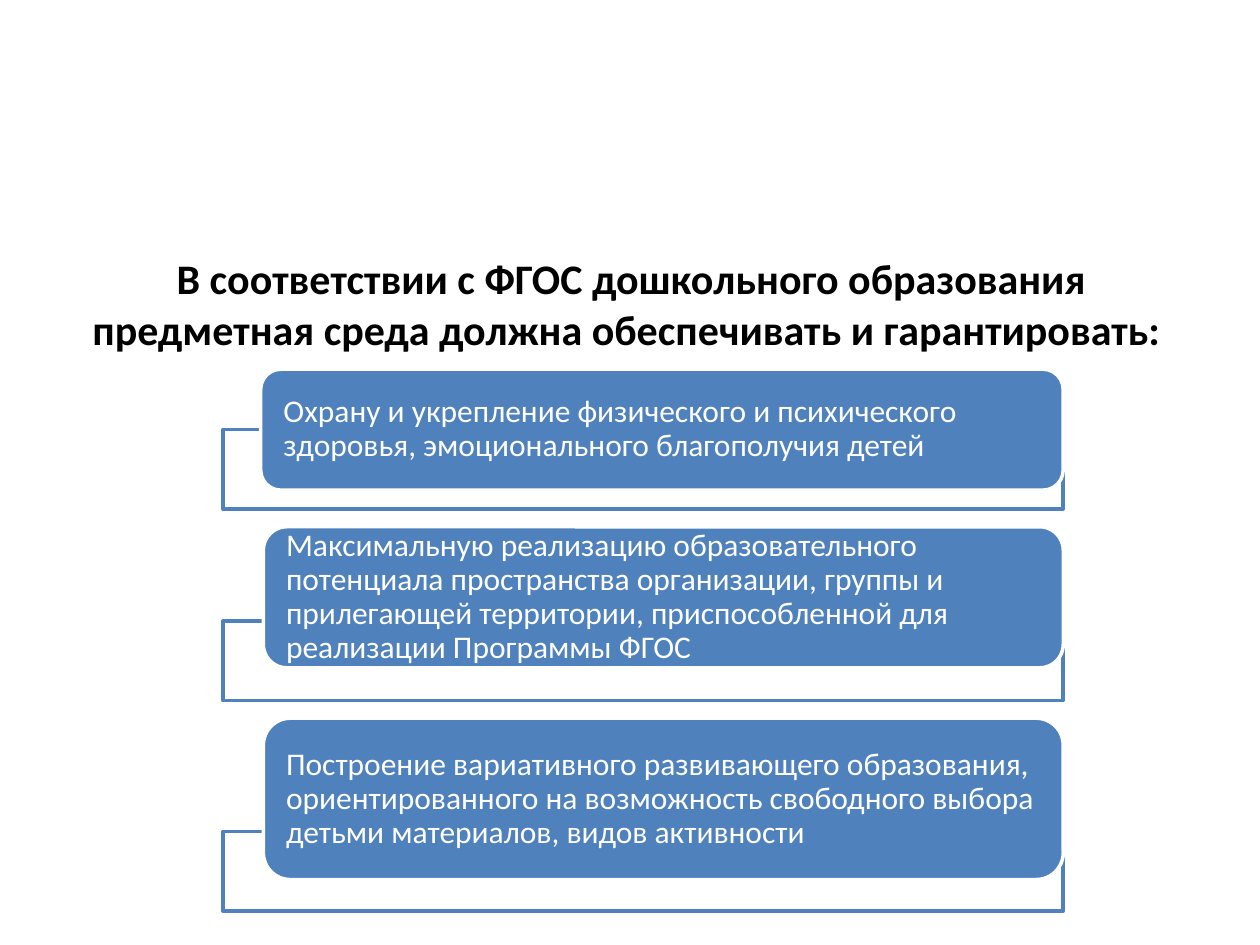
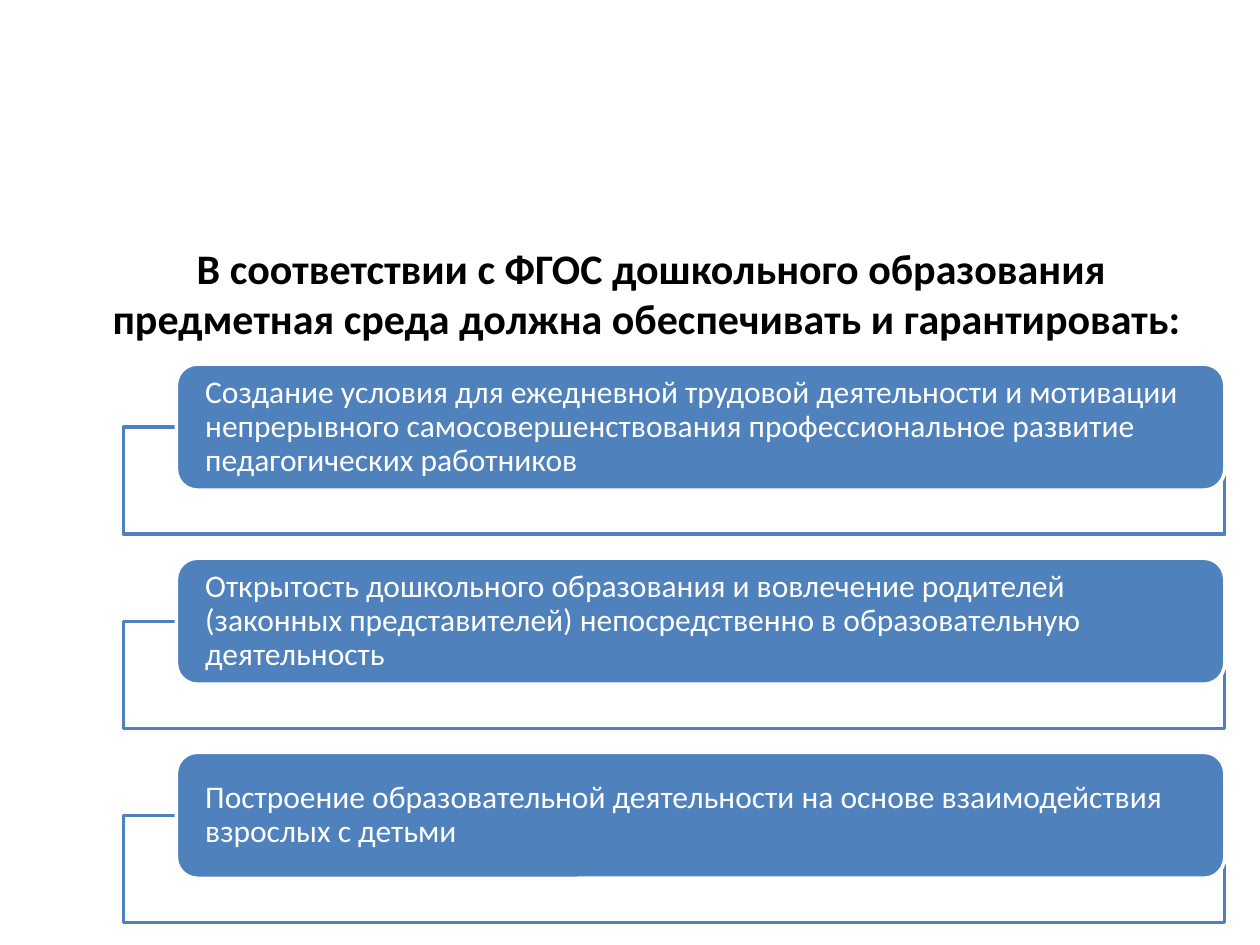
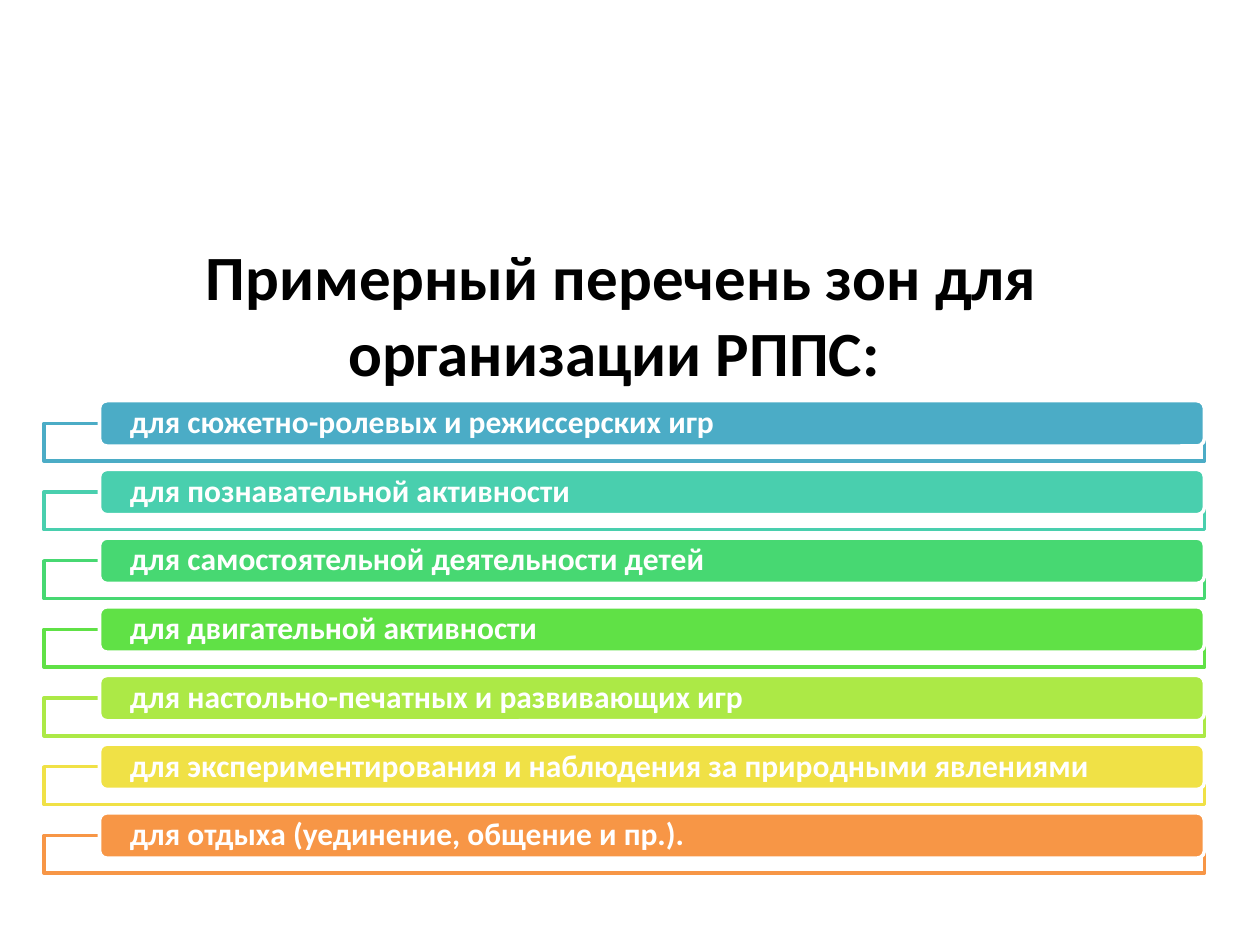
from lxml import etree
from pptx import Presentation
from pptx.dml.color import RGBColor
from pptx.enum.shapes import MSO_SHAPE
from pptx.enum.text import MSO_ANCHOR, MSO_AUTO_SIZE, PP_ALIGN
from pptx.oxml.ns import qn
from pptx.util import Pt

RECTANGLE, ROUNDED = MSO_SHAPE.RECTANGLE, MSO_SHAPE.ROUNDED_RECTANGLE
MIDDLE, NO_FIT = MSO_ANCHOR.MIDDLE, MSO_AUTO_SIZE.NONE
LEFT, CENTER = PP_ALIGN.LEFT, PP_ALIGN.CENTER

FONT = "Calibri"
COLOURS = {
    "white": "FFFFFF", "black": "000000", "blue": "4F81BD",
    "aqua": "4BACC6", "turquoise": "49CFAE", "emerald": "47D872",
    "green": "60E146", "lime": "ACE946", "yellow": "F0E146", "orange": "F79646",
}
TITLE_SIZE = (648, 90)
TITLE_ONLY = 5
CORNER = 0.16667    # corner radius as a share of the card height
CORNER_INSET = 0.29289    # share of the radius that the text area loses


def even_rows(count, left, top, pitch, height, frame_drop):
    """Equal cards as (left, top, height, frame drop)."""
    return [(left, top + i * pitch, height, frame_drop) for i in range(count)]


# Content; a frame is (left, width, height), all in points
STANDARD_TITLE = ("В соответствии с ФГОС дошкольного образования "
                  "предметная среда должна обеспечивать и гарантировать: ")
SLIDES = [
    {
        "title": STANDARD_TITLE, "title_at": (36.7, 128.2), "title_size": 24,
        "frame": (127.4, 480.2, 45.4), "margin": 13, "bold": False,
        "rows": [(149, 211, 69.1, 34.5),
                 (150.5, 301, 80.6, 54),
                 (150.5, 410.4, 92.2, 64.8)],
        "items": [
            ("Охрану и укрепление физического и психического здоровья, "
             "эмоционального благополучия детей", "blue"),
            ("Максимальную реализацию образовательного потенциала пространства "
             "организации, группы и прилегающей территории, приспособленной для "
             "реализации Программы ФГОС", "blue"),
            ("Построение вариативного развивающего образования, ориентированного "
             "на возможность свободного выбора детьми материалов, видов "
             "активности", "blue"),
        ],
    },
    {
        "title": STANDARD_TITLE, "title_at": (48.2, 122.4), "title_size": 24,
        "frame": (70.6, 629.3, 61.2), "margin": 16.5, "bold": False,
        "rows": even_rows(3, 100.8, 208.1, 110.9, 72, 36),
        "items": [
            ("Создание условия для ежедневной трудовой деятельности и мотивации "
             "непрерывного самосовершенствования профессиональное развитие "
             "педагогических работников", "blue"),
            ("Открытость дошкольного образования и вовлечение родителей "
             "(законных представителей) непосредственно в образовательную "
             "деятельность", "blue"),
            ("Построение образовательной деятельности на основе взаимодействия "
             "взрослых с детьми", "blue"),
        ],
    },
    {
        "title": "Примерный перечень зон для организации РППС: ",
        "title_at": (31, 133.9), "title_size": 36,
        "frame": (25.2, 663.1, 21.6), "margin": 17.3, "bold": True,
        "rows": even_rows(7, 56.9, 229, 39.25, 25.9, 12.9),
        "items": [
            ("для сюжетно-ролевых и режиссерских игр", "aqua"),
            ("для познавательной активности", "turquoise"),
            ("для самостоятельной деятельности детей", "emerald"),
            ("для двигательной активности", "green"),
            ("для настольно-печатных и развивающих игр", "lime"),
            ("для экспериментирования и наблюдения за природными явлениями", "yellow"),
            ("для отдыха (уединение, общение и пр.).", "orange"),
        ],
    },
]


def colour(name):
    return RGBColor.from_string(COLOURS[name])


def write(shape, text, *, size, color, bold, align, spacing=1.0, margins=(7.2, 3.6)):
    """Put one formatted paragraph into a shape."""
    frame = shape.text_frame
    frame.word_wrap = True
    frame.auto_size = NO_FIT
    frame.vertical_anchor = MIDDLE
    frame.margin_left = frame.margin_right = Pt(margins[0])
    frame.margin_top = frame.margin_bottom = Pt(margins[1])
    paragraph = frame.paragraphs[0]
    paragraph.alignment = align
    paragraph.line_spacing = spacing
    run = paragraph.add_run()
    run.text = text
    run.font.name = FONT
    run.font.size = Pt(size)
    run.font.bold = bold
    run.font.color.rgb = colour(color)


def add_box(slide, kind, left, top, width, height, fill, line):
    shape = slide.shapes.add_shape(kind, Pt(left), Pt(top), Pt(width), Pt(height))
    shape.shadow.inherit = False
    shape.fill.solid()
    shape.fill.fore_color.rgb = colour(fill)
    shape.line.color.rgb = colour(line)
    shape.line.width = Pt(2)
    return shape


def set_opacity(shape, percent):
    fill_color = shape.fill._xPr.find(qn("a:solidFill"))[0]
    etree.SubElement(fill_color, qn("a:alpha")).set("val", str(percent * 1000))


def add_row(slide, content, row, text, accent):
    """Draw an outlined frame with a rounded card over it."""
    frame_left, frame_width, frame_height = content["frame"]
    left, top, height, frame_drop = row
    outline = add_box(slide, RECTANGLE, frame_left, top + frame_drop,
                      frame_width, frame_height, "white", accent)
    set_opacity(outline, 90)
    card = add_box(slide, ROUNDED, left, top, frame_left + frame_width - left,
                   height, accent, "white")
    margin = content["margin"] - height * CORNER * CORNER_INSET
    write(card, text, size=18, color="white", bold=content["bold"],
          align=LEFT, spacing=0.9, margins=(margin, 0))


def add_slide(presentation, content):
    slide = presentation.slides.add_slide(presentation.slide_layouts[TITLE_ONLY])
    title = slide.shapes.title
    title.left, title.top = map(Pt, content["title_at"])
    title.width, title.height = map(Pt, TITLE_SIZE)
    write(title, content["title"], size=content["title_size"], color="black",
          bold=True, align=CENTER)
    for row, (text, accent) in zip(content["rows"], content["items"]):
        add_row(slide, content, row, text, accent)


def main():
    presentation = Presentation()
    presentation.slide_width, presentation.slide_height = Pt(720), Pt(540)
    for content in SLIDES:
        add_slide(presentation, content)
    presentation.save("out.pptx")


if __name__ == "__main__":
    main()
